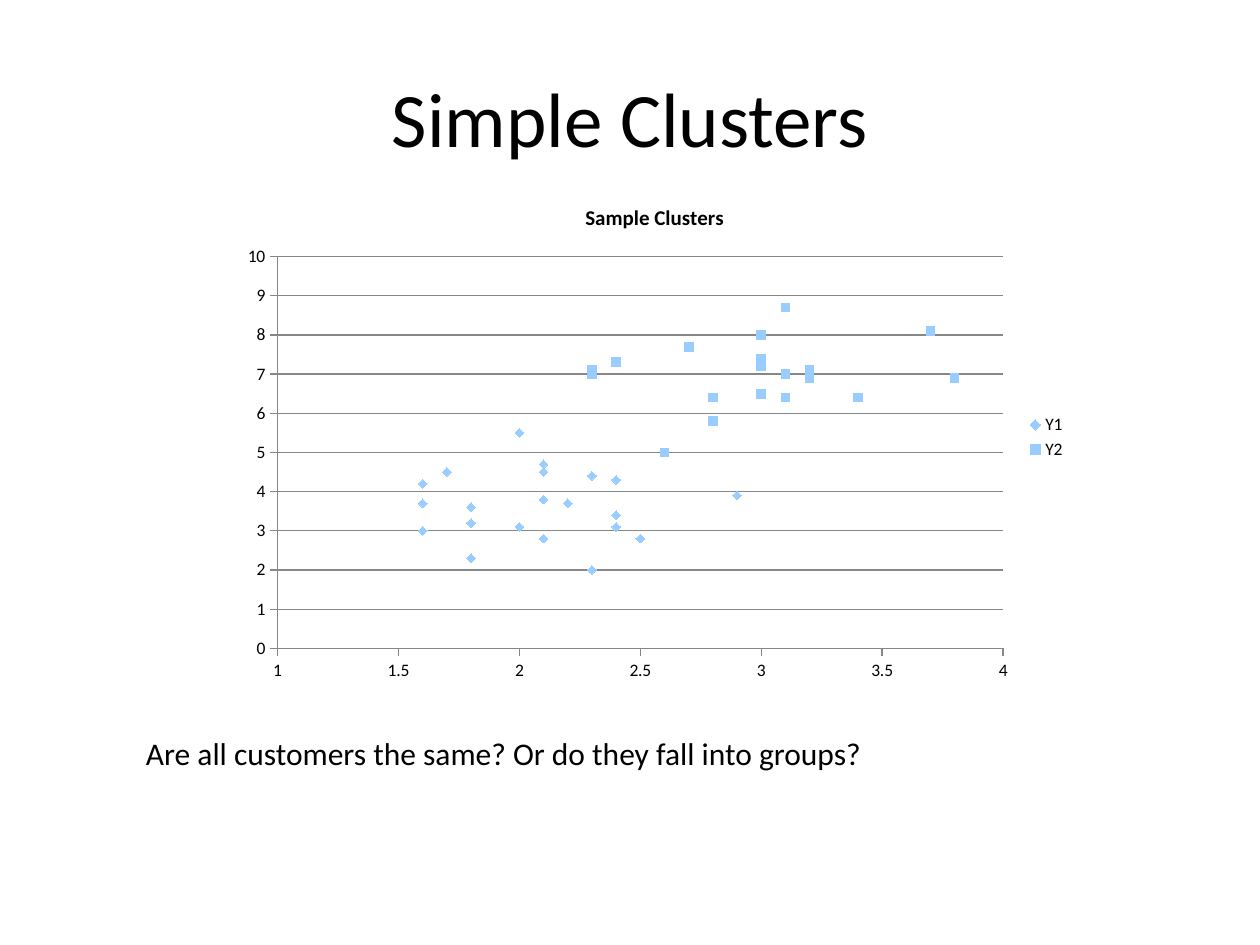
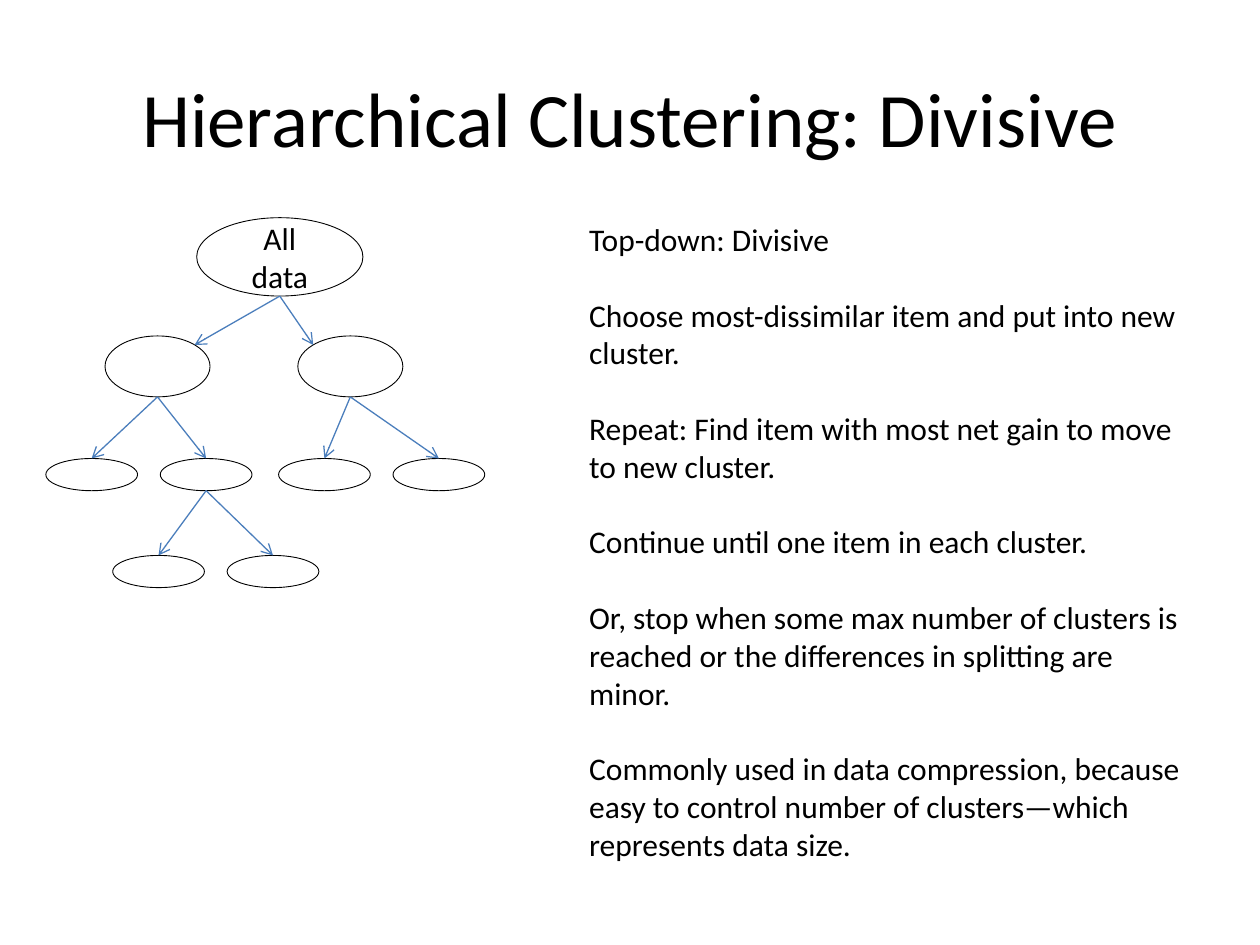
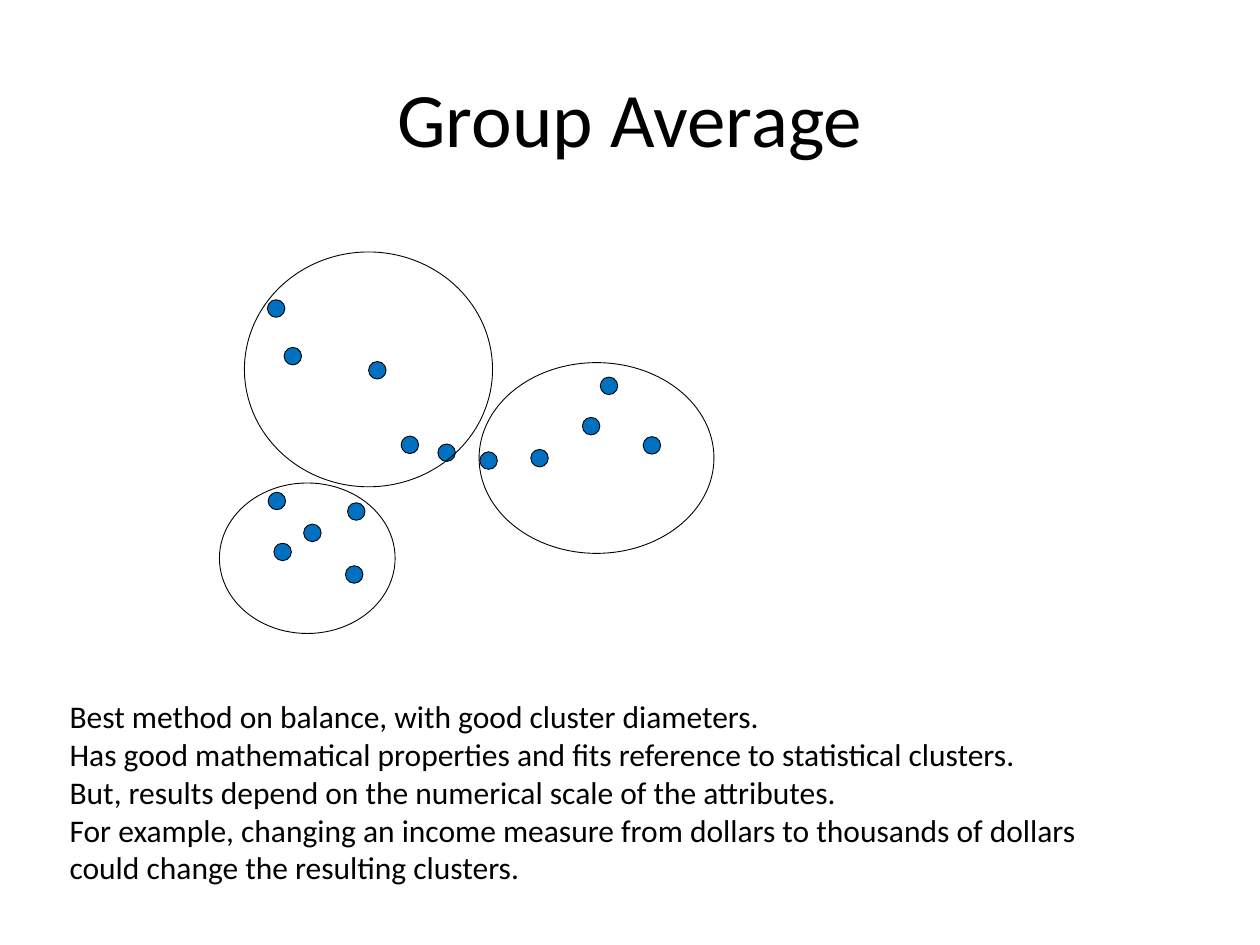
from dataclasses import dataclass
from math import sqrt

from lxml.etree import SubElement
from pptx import Presentation
from pptx.chart.data import XyChartData
from pptx.dml.color import RGBColor
from pptx.enum.chart import XL_CHART_TYPE, XL_LEGEND_POSITION, XL_MARKER_STYLE, XL_TICK_MARK
from pptx.enum.shapes import MSO_CONNECTOR, MSO_SHAPE
from pptx.enum.text import MSO_ANCHOR, MSO_AUTO_SIZE, PP_ALIGN
from pptx.oxml import parse_xml
from pptx.oxml.ns import nsdecls, qn
from pptx.util import Pt


@dataclass(frozen=True)
class Theme:
    font: str = "Calibri"
    ink: RGBColor = RGBColor(0, 0, 0)
    arrow: RGBColor = RGBColor(0x4B, 0x7E, 0xBC)
    dot: RGBColor = RGBColor(0x00, 0x70, 0xC0)
    marker: RGBColor = RGBColor(0x99, 0xCC, 0xFF)
    grid: RGBColor = RGBColor(0x87, 0x87, 0x87)
    title_size: int = 44
    body_size: int = 18
    chart_title_size: int = 12
    chart_size: int = 10
    outline: float = 0.5
    arrow_width: float = 0.75


THEME = Theme()
SLIDE_SIZE = (720, 540)
TITLE_BOX = (36, 21.6, 648, 90)

# Slide 1
CHART_BOX = (131.8, 104.4, 484.6, 290.9)
PLOT_BOX = (158.6, 146.6, 414.6, 224)
CLUSTERS = [
    ("Y1", XL_MARKER_STYLE.DIAMOND, [
        (1.6, 4.2), (2.5, 2.8), (1.8, 2.3), (2.1, 2.8), (2.9, 3.9), (2, 3.1), (1.6, 3),
        (2.1, 4.5), (2.1, 4.7), (2.3, 4.4), (2.4, 3.1), (2.4, 4.3), (1.7, 4.5), (1.8, 3.2),
        (2.2, 3.7), (2, 5.5), (2.1, 3.8), (2.4, 3.4), (1.6, 3.7), (2.3, 2), (1.8, 3.6)]),
    ("Y2", XL_MARKER_STYLE.SQUARE, [
        (3, 6.5), (2.8, 5.8), (3, 8), (3.2, 7.1), (3.1, 6.4), (3.2, 6.9), (2.6, 5),
        (2.7, 7.7), (3.1, 7), (2.3, 7.1), (2.3, 7), (3.1, 8.7), (3.8, 6.9), (3.7, 8.1),
        (2.8, 6.4), (2.4, 7.3), (2.3, 7.1), (3, 7.2), (3.1, 6.4), (3.4, 6.4), (3, 7.4)]),
]
QUESTION_BOX = (76.3, 415.7, 534.2, 29)
QUESTION = ["Are all customers the same? Or do they fall into groups?"]

# Slide 2: each level has a top, a node size and (name, left, parent, label) nodes
TREE_LEVELS = [
    (124.4, (95, 44.8), [("root", 112.4, None, "All data")]),
    (192, (60, 34.8), [("left", 60, "root", ""), ("right", 170.2, "root", "")]),
    (262, (52.4, 18.4), [("left 1", 26.2, "left", ""), ("left 2", 91.6, "left", ""),
                         ("right 1", 159.2, "right", ""), ("right 2", 224.6, "right", "")]),
    (317.4, (52.4, 18.4), [("left 2a", 64.4, "left 2", ""), ("left 2b", 129.8, "left 2", "")]),
]
DIVISIVE_BOX = (329.6, 122.2, 354.4, 378)
DIVISIVE_GAP = 21.6
DIVISIVE_STEPS = [
    "Top-down: Divisive",
    "Choose most-dissimilar item and put into new cluster.",
    "Repeat: Find item with most net gain to move to new cluster.",
    "Continue until one item in each cluster.",
    "Or, stop when some max number of clusters is reached or the differences in splitting "
    "are minor.",
    "Commonly used in data compression, because easy to control number of clusters—which "
    "represents data size.",
]

# Slide 3
DOT_SIZE = 10
DOT_CENTERS = [
    (348, 220.5), (337.8, 243.5), (372.5, 254.5), (203.6, 292.3), (158.2, 286.3),
    (161.5, 315.4), (178.5, 304.5), (202.4, 328.3), (167.3, 203.5), (157.8, 176.3),
    (215.6, 211.6), (234.2, 254.2), (308.3, 261.8), (255.2, 258.7), (279.2, 263.2),
]
GROUP_OVALS = [(139.7, 144, 141.8, 134.2), (125.4, 276, 100.4, 86), (273.8, 207.2, 134.2, 109)]
AVERAGE_BOX = (32.7, 394.9, 616.3, 116.6)
AVERAGE_NOTES = [
    "Best method on balance, with good cluster diameters.",
    "Has good mathematical properties and fits reference to statistical clusters.",
    "But, results depend on the numerical scale of the attributes.",
    "For example, changing an income measure from dollars to thousands of dollars could "
    "change the resulting clusters.",
]


def points(values):
    return [Pt(value) for value in values]


def style_font(font, size, bold=False):
    font.name = THEME.font
    font.size = Pt(size)
    font.bold = bold
    font.color.rgb = THEME.ink


def write_paragraphs(frame, texts, size, alignment=PP_ALIGN.LEFT, gap=0):
    for index, text in enumerate(texts):
        paragraph = frame.add_paragraph() if index else frame.paragraphs[0]
        paragraph.alignment = alignment
        paragraph.space_before = Pt(gap if index else 0)
        run = paragraph.add_run()
        run.text = text
        style_font(run.font, size)


def add_titled_slide(presentation, title):
    slide = presentation.slides.add_slide(presentation.slide_layouts[5])
    shape = slide.shapes.title
    shape.left, shape.top, shape.width, shape.height = points(TITLE_BOX)
    shape.text_frame.vertical_anchor = MSO_ANCHOR.MIDDLE
    write_paragraphs(shape.text_frame, [title], THEME.title_size, PP_ALIGN.CENTER)
    return slide


def add_body_text(slide, box, texts, gap=0):
    frame = slide.shapes.add_textbox(*points(box)).text_frame
    frame.word_wrap = True
    frame.auto_size = MSO_AUTO_SIZE.SHAPE_TO_FIT_TEXT
    write_paragraphs(frame, texts, THEME.body_size, gap=gap)


def add_oval(slide, box, fill=None, label=""):
    shape = slide.shapes.add_shape(MSO_SHAPE.OVAL, *points(box))
    shape.shadow.inherit = False
    if fill is None:
        shape.fill.background()
    else:
        shape.fill.solid()
        shape.fill.fore_color.rgb = fill
    shape.line.color.rgb = THEME.ink
    shape.line.width = Pt(THEME.outline)
    if label:
        shape.text_frame.vertical_anchor = MSO_ANCHOR.MIDDLE
        write_paragraphs(shape.text_frame, [label], THEME.body_size, PP_ALIGN.CENTER)
    return shape


def add_arrow(slide, start, end):
    connector = slide.shapes.add_connector(MSO_CONNECTOR.STRAIGHT, *points(start + end))
    connector.line.color.rgb = THEME.arrow
    connector.line.width = Pt(THEME.arrow_width)
    properties = connector.element.spPr
    SubElement(properties.find(qn("a:ln")), qn("a:tailEnd"), type="arrow")
    SubElement(properties, qn("a:effectLst"))
    return connector


def set_plot_area(chart):
    """Fix the inner plot area, given as fractions of the chart frame."""
    chart_left, chart_top, chart_width, chart_height = CHART_BOX
    left, top, width, height = PLOT_BOX
    fractions = {"x": (left - chart_left) / chart_width, "y": (top - chart_top) / chart_height,
                 "w": width / chart_width, "h": height / chart_height}
    plot_area = chart.element.find(".//" + qn("c:plotArea"))
    for layout in plot_area.findall(qn("c:layout")):
        plot_area.remove(layout)
    settings = '<c:layoutTarget val="inner"/><c:xMode val="edge"/><c:yMode val="edge"/>'
    settings += "".join(f'<c:{key} val="{value:.4f}"/>' for key, value in fractions.items())
    plot_area.insert(0, parse_xml(
        f'<c:layout {nsdecls("c")}><c:manualLayout>{settings}</c:manualLayout></c:layout>'))


def style_axis(axis, low, high, step, gridlines):
    axis.minimum_scale, axis.maximum_scale, axis.major_unit = low, high, step
    axis.major_tick_mark = XL_TICK_MARK.OUTSIDE
    axis.format.line.color.rgb = THEME.grid
    axis.has_major_gridlines = gridlines
    if gridlines:
        axis.major_gridlines.format.line.color.rgb = THEME.grid


def cluster_data():
    """Give every series all x values, with y left empty outside its own cluster."""
    data = XyChartData()
    for name, _, _ in CLUSTERS:
        series = data.add_series(name)
        for owner, _, coordinates in CLUSTERS:
            for x, y in coordinates:
                series.add_data_point(x, y if owner == name else None)
    return data


def add_cluster_chart(slide):
    chart = slide.shapes.add_chart(
        XL_CHART_TYPE.XY_SCATTER, *points(CHART_BOX), cluster_data()).chart
    style_font(chart.font, THEME.chart_size)
    chart.has_title = True
    run = chart.chart_title.text_frame.paragraphs[0].add_run()
    run.text = "Sample Clusters"
    style_font(run.font, THEME.chart_title_size, bold=True)
    chart.has_legend = True
    chart.legend.position = XL_LEGEND_POSITION.RIGHT
    chart.legend.include_in_layout = False
    style_axis(chart.category_axis, 1, 4, 0.5, gridlines=False)
    style_axis(chart.value_axis, 0, 10, 1, gridlines=True)
    plot = chart.plots[0]
    plot.vary_by_categories = False
    for series, (_, marker_style, _) in zip(plot.series, CLUSTERS):
        series.format.line.fill.background()
        series.marker.style = marker_style
        series.marker.size = 5
        series.marker.format.fill.solid()
        series.marker.format.fill.fore_color.rgb = THEME.marker
        series.marker.format.line.fill.background()
    set_plot_area(chart)


def add_tree(slide):
    """Draw each level; arrows meet the second level at its inner shoulders, others on top."""
    boxes = {}
    for depth, (top, (width, height), nodes) in enumerate(TREE_LEVELS):
        for name, left, parent, label in nodes:
            boxes[name] = (left, top, width, height)
            oval = add_oval(slide, boxes[name], label=label)
            if parent is None:
                continue
            parent_left, parent_top, parent_width, parent_height = boxes[parent]
            start = (parent_left + parent_width / 2, parent_top + parent_height)
            center = left + width / 2
            if depth == 1:
                side = 1 if center < start[0] else -1
                shoulder = (center + side * width / sqrt(8),
                            top + height / 2 - height / sqrt(8))
                add_arrow(slide, start, shoulder)
            else:
                add_arrow(slide, start, (center, top)).end_connect(oval, 0)


def add_groups(slide):
    for x, y in DOT_CENTERS:
        box = (x - DOT_SIZE / 2, y - DOT_SIZE / 2, DOT_SIZE, DOT_SIZE)
        add_oval(slide, box, THEME.dot)
    for box in GROUP_OVALS:
        add_oval(slide, box)


def main():
    presentation = Presentation()
    presentation.slide_width, presentation.slide_height = points(SLIDE_SIZE)

    slide = add_titled_slide(presentation, "Simple Clusters")
    add_cluster_chart(slide)
    add_body_text(slide, QUESTION_BOX, QUESTION)

    slide = add_titled_slide(presentation, "Hierarchical Clustering: Divisive")
    add_tree(slide)
    add_body_text(slide, DIVISIVE_BOX, DIVISIVE_STEPS, DIVISIVE_GAP)

    slide = add_titled_slide(presentation, "Group Average")
    add_body_text(slide, AVERAGE_BOX, AVERAGE_NOTES)
    add_groups(slide)

    presentation.save("out.pptx")


if __name__ == "__main__":
    main()
